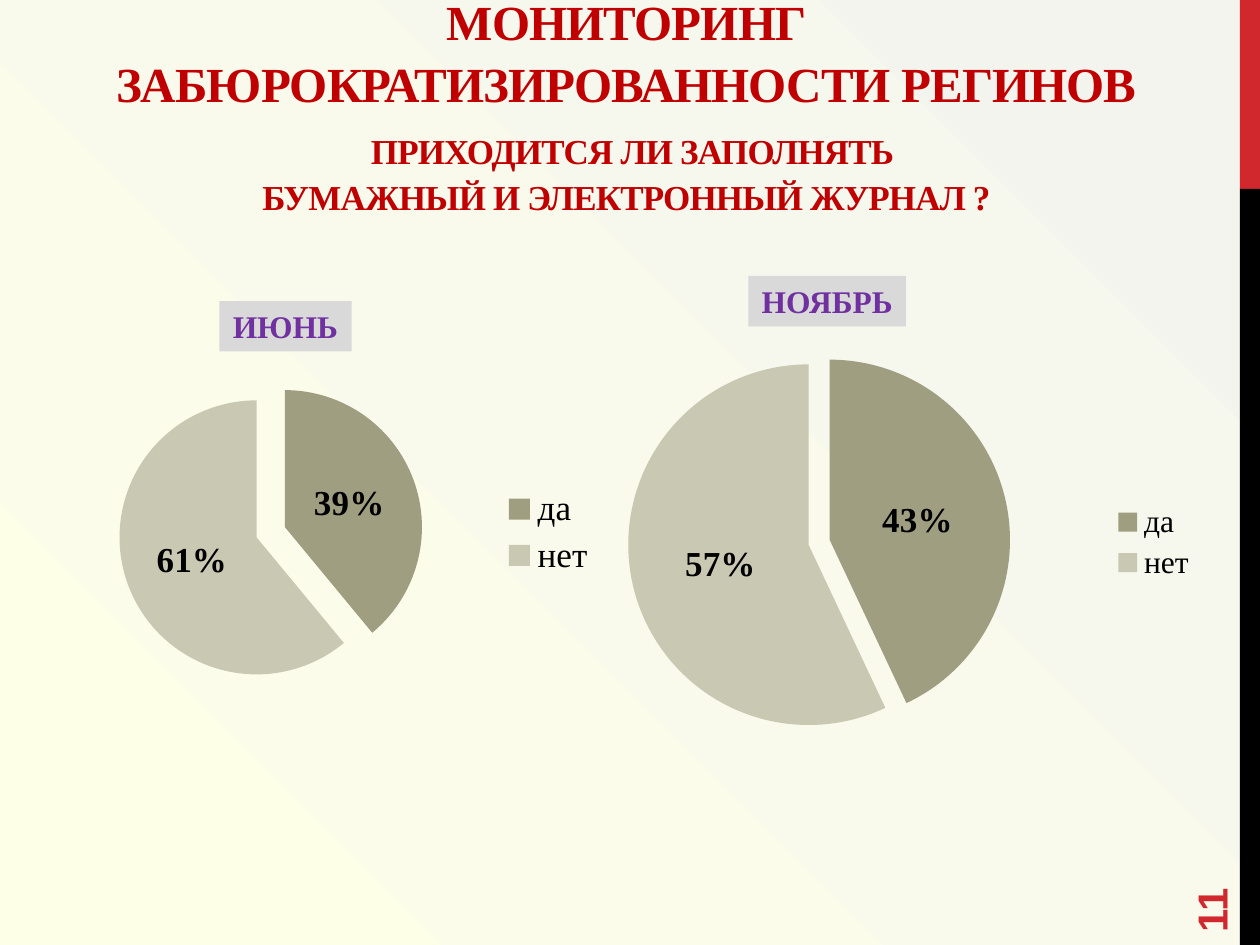
from dataclasses import dataclass

from lxml import etree
from pptx import Presentation
from pptx.chart.data import CategoryChartData
from pptx.dml.color import RGBColor
from pptx.enum.chart import XL_CHART_TYPE, XL_LABEL_POSITION, XL_LEGEND_POSITION
from pptx.enum.shapes import MSO_SHAPE
from pptx.enum.text import MSO_ANCHOR, MSO_AUTO_SIZE, PP_ALIGN
from pptx.oxml.ns import qn
from pptx.slide import Slide
from pptx.util import Inches, Pt

PIE = XL_CHART_TYPE.PIE
LABEL_CENTER = XL_LABEL_POSITION.CENTER
LEGEND_RIGHT = XL_LEGEND_POSITION.RIGHT
RECTANGLE = MSO_SHAPE.RECTANGLE
MIDDLE, BOTTOM = MSO_ANCHOR.MIDDLE, MSO_ANCHOR.BOTTOM
CENTER = PP_ALIGN.CENTER
NO_AUTOFIT = MSO_AUTO_SIZE.NONE

CREAM = RGBColor(0xFD, 0xFF, 0xE7)
PALE_GRAY = RGBColor(0xF4, 0xF4, 0xEF)
RED = RGBColor(0xD1, 0x28, 0x2E)
DARK_RED = RGBColor(0xC0, 0x00, 0x00)
BLACK = RGBColor(0x00, 0x00, 0x00)
PURPLE = RGBColor(0x70, 0x30, 0xA0)
TAG_GRAY = RGBColor(0xD9, 0xD9, 0xD9)
OLIVE = RGBColor(0xA0, 0x9E, 0x80)
LIGHT_OLIVE = RGBColor(0xC9, 0xC8, 0xB3)

SERIF = "Times New Roman"
SANS = "Arial"


@dataclass(frozen=True)
class Area:
    left: float
    top: float
    width: float
    height: float

    def lengths(self) -> list[Inches]:
        return [Inches(n) for n in (self.left, self.top, self.width, self.height)]


@dataclass(frozen=True)
class MonthPoll:
    month: str
    tag_area: Area
    chart_area: Area
    shares: tuple[float, float]
    explosion: int
    legend_size: int


POLLS = (
    MonthPoll("ИЮНЬ", Area(1.74, 2.39, 1.05, 0.4), Area(0.35, 2.88, 4.49, 2.69),
              (0.39, 0.61), 11, 20),
    MonthPoll("НОЯБРЬ", Area(5.94, 2.19, 1.25, 0.4), Area(4.21, 2.65, 5.39, 3.31),
              (0.43, 0.57), 6, 18),
)


def style_font(font, size: int, color: RGBColor, name: str = SERIF, bold: bool = True) -> None:
    font.size = Pt(size)
    font.name = name
    font.bold = bold
    font.color.rgb = color


def add_rectangle(slide: Slide, area: Area, color: RGBColor):
    box = slide.shapes.add_shape(RECTANGLE, *area.lengths())
    box.shadow.inherit = False
    box.fill.solid()
    box.fill.fore_color.rgb = color
    box.line.fill.background()
    return box


def write_title(slide: Slide) -> None:
    title = slide.shapes.title
    title.left, title.top, title.width, title.height = Area(0.47, 0.44, 9, 1.34).lengths()
    frame = title.text_frame
    frame.auto_size = NO_AUTOFIT
    frame.word_wrap = True
    frame.vertical_anchor = BOTTOM
    para = frame.paragraphs[0]
    para.alignment = CENTER
    para.line_spacing = 1.05
    lines = (
        ("МОНИТОРИНГ ЗАБЮРОКРАТИЗИРОВАННОСТИ РЕГИНОВ", 28),
        ("ПРИХОДИТСЯ ЛИ ЗАПОЛНЯТЬ", 20),
        ("БУМАЖНЫЙ И ЭЛЕКТРОННЫЙ ЖУРНАЛ ?", 20),
    )
    for index, (text, size) in enumerate(lines):
        if index:
            para.add_line_break()
        if index == 1:
            # A larger leading space sets the height of the subtitle line
            add_title_span(para, " ", 28)
        add_title_span(para, text, size)


def add_title_span(para, text: str, size: int) -> None:
    span = para.add_run()
    span.text = text
    style_font(span.font, size, DARK_RED)
    span.font._element.set("spc", "-50")


def add_page_number(slide: Slide) -> None:
    box = slide.shapes.add_textbox(*Area(8.89, 6.58, 1.44, 0.4).lengths())
    box.rotation = 270
    frame = box.text_frame
    frame.word_wrap = True
    frame.vertical_anchor = MIDDLE
    frame.text = "11"
    style_font(frame.paragraphs[0].runs[0].font, 24, RED, SANS)


def add_month_tag(slide: Slide, poll: MonthPoll) -> None:
    box = add_rectangle(slide, poll.tag_area, TAG_GRAY)
    frame = box.text_frame
    frame.word_wrap = False
    frame.text = poll.month
    para = frame.paragraphs[0]
    para.alignment = CENTER
    style_font(para.runs[0].font, 18, PURPLE)


def add_poll_chart(slide: Slide, poll: MonthPoll) -> None:
    data = CategoryChartData(number_format="0%")
    data.categories = ["да", "нет"]
    data.add_series("Series 1", poll.shares)
    chart = slide.shapes.add_chart(PIE, *poll.chart_area.lengths(), data).chart
    chart.has_title = False
    style_font(chart.font, poll.legend_size, BLACK)

    chart.has_legend = True
    chart.legend.position = LEGEND_RIGHT
    chart.legend.include_in_layout = False
    style_font(chart.legend.font, poll.legend_size, BLACK, bold=False)

    plot = chart.plots[0]
    plot.vary_by_categories = True
    series = plot.series[0]
    # Pull the slices apart
    explosion = etree.Element(qn("c:explosion"), val=str(poll.explosion))
    series._element.find(qn("c:tx")).addnext(explosion)
    for index, color in enumerate((OLIVE, LIGHT_OLIVE)):
        fill = series.points[index].format.fill
        fill.solid()
        fill.fore_color.rgb = color

    plot.has_data_labels = True
    labels = plot.data_labels
    labels.show_value = True
    labels.show_percentage = False
    labels.number_format = "0%"
    labels.number_format_is_linked = False
    labels.position = LABEL_CENTER
    style_font(labels.font, 20, BLACK)


def main() -> None:
    deck = Presentation()
    deck.slide_width, deck.slide_height = Inches(10), Inches(7.5)
    slide = deck.slides.add_slide(deck.slide_layouts[5])

    # Background gradient from bottom left to top right
    backdrop = slide.background.fill
    backdrop.gradient()
    backdrop.gradient_angle = 45
    for stop, color in zip(backdrop.gradient_stops, (CREAM, PALE_GRAY)):
        stop.color.rgb = color

    # Side stripe
    add_rectangle(slide, Area(9.84, 0, 0.16, 1.5), RED)
    add_rectangle(slide, Area(9.84, 1.5, 0.16, 6), BLACK)

    # Heading and page number
    write_title(slide)
    add_page_number(slide)

    # Monthly results
    for poll in POLLS:
        add_poll_chart(slide, poll)
    for poll in POLLS:
        add_month_tag(slide, poll)

    deck.save("out.pptx")


if __name__ == "__main__":
    main()
